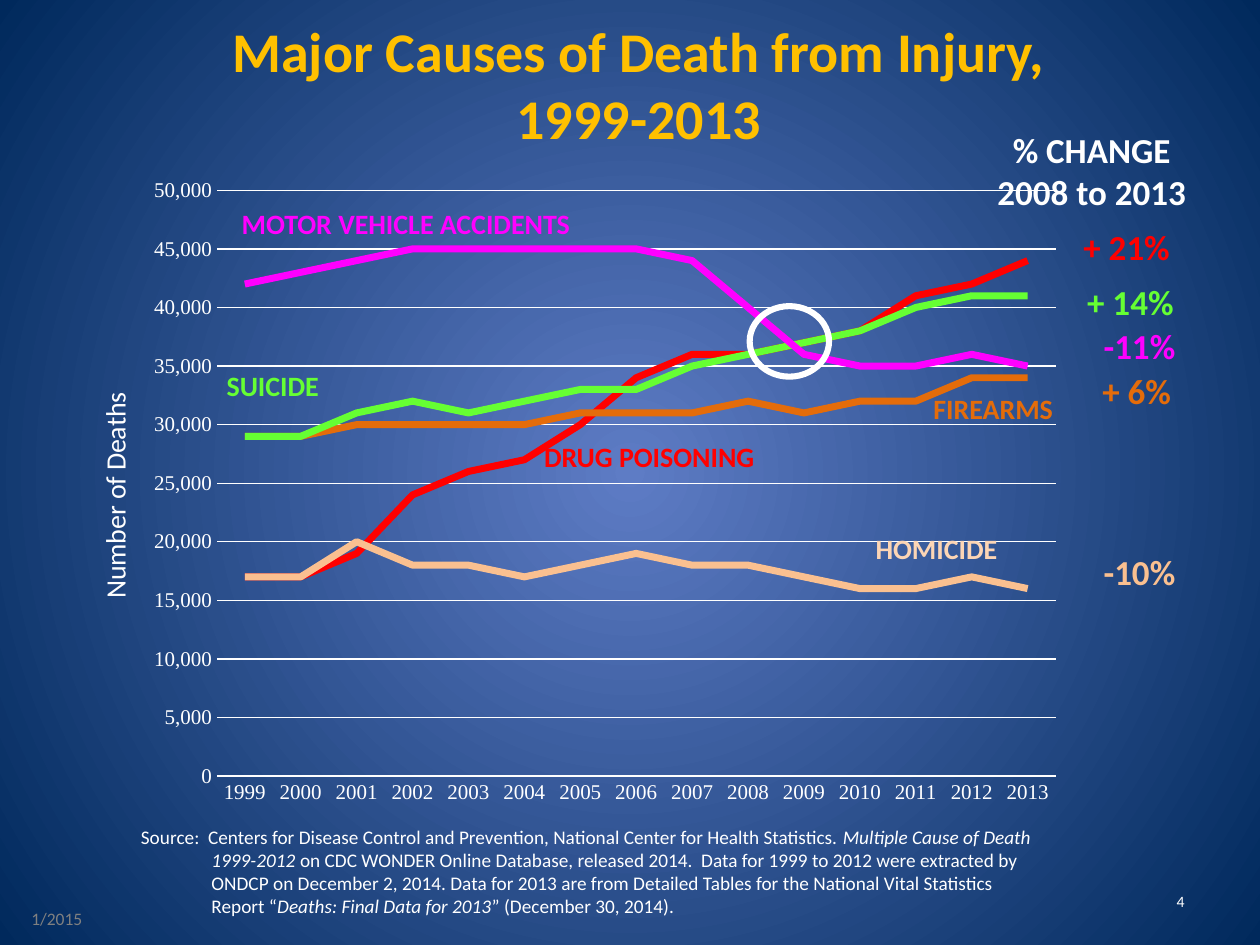
from dataclasses import dataclass

from lxml import etree
from pptx import Presentation
from pptx import util as u
from pptx.chart.data import CategoryChartData
from pptx.dml.color import RGBColor
from pptx.enum import chart as charts, shapes, text
from pptx.oxml import parse_xml
from pptx.oxml.ns import nsdecls, qn


@dataclass(frozen=True)
class Theme:
    font: str = "Calibri"
    axis_font: str = "Times New Roman"
    center: str = "5E7CC5"
    edge: str = "00295C"
    white: str = "FFFFFF"
    gold: str = "FFC000"
    gray: str = "808080"
    red: str = "FF0000"
    orange: str = "E46C0A"
    green: str = "66FF33"
    peach: str = "FAC090"
    light_peach: str = "FCD5B5"
    magenta: str = "FF00FF"
    title: int = 32
    change: int = 20
    label: int = 16
    axis: int = 12
    source: int = 11
    date: int = 10
    number: int = 9


class SlideBuilder:
    def __init__(self, slide, theme):
        self.slide = slide
        self.theme = theme

    def style(self, font, size, color, name=None, bold=False, italic=False):
        font.name = name or self.theme.font
        font.size = u.Pt(size)
        font.bold = bold
        font.italic = italic
        font.color.rgb = RGBColor.from_string(color)

    def background(self):
        fill = self.slide.background.fill
        fill.gradient()
        for stop, color in zip(fill.gradient_stops, (self.theme.center, self.theme.edge)):
            stop.color.rgb = RGBColor.from_string(color)
        # A circular gradient that starts in the middle of the slide
        linear = next(self.slide.element.iter(qn("a:lin")))
        circle = parse_xml(
            f'<a:path {nsdecls("a")} path="circle">'
            '<a:fillToRect l="50000" t="50000" r="50000" b="50000"/></a:path>')
        linear.getparent().replace(linear, circle)

    def text(self, box, paragraphs, size, color, bold=False, wrap=True, hanging=0,
             align=text.PP_ALIGN.LEFT, anchor=text.MSO_ANCHOR.TOP):
        """Each paragraph is a list of runs; every second run is italic."""
        shape = self.slide.shapes.add_textbox(*map(u.Inches, box))
        frame = shape.text_frame
        frame.word_wrap = wrap
        frame.vertical_anchor = anchor
        for index, runs in enumerate(paragraphs):
            paragraph = frame.add_paragraph() if index else frame.paragraphs[0]
            paragraph.alignment = align
            if hanging:
                properties = paragraph._p.get_or_add_pPr()
                properties.set("marL", str(u.Inches(hanging)))
                properties.set("indent", str(-u.Inches(hanging)))
            for position, wording in enumerate(runs):
                run = paragraph.add_run()
                run.text = wording
                self.style(run.font, size, color, bold=bold, italic=position % 2 == 1)

    def label(self, left, top, width, height, wording, size, color):
        self.text((left, top, width, height), [[wording]], size, color, bold=True, wrap=False)

    def ring(self, box, color, width):
        shape = self.slide.shapes.add_shape(shapes.MSO_SHAPE.OVAL, *map(u.Inches, box))
        shape.shadow.inherit = False
        shape.fill.background()
        shape.line.color.rgb = RGBColor.from_string(color)
        shape.line.width = u.Pt(width)

    def place(self, element, target=None, **fractions):
        """Give a chart part a fixed place, in fractions of the chart."""
        for old in element.findall(qn("c:layout")):
            element.remove(old)
        layout = parse_xml(f'<c:layout {nsdecls("c")}><c:manualLayout/></c:layout>')
        values = {"layoutTarget": target} if target else {}
        values.update(xMode="edge", yMode="edge", **fractions)
        for name, value in values.items():
            etree.SubElement(layout[0], qn(f"c:{name}")).set("val", str(value))
        text_part = element.find(qn("c:tx"))
        element.insert(0 if text_part is None else 1, layout)

    def line_chart(self, box, categories, series, axis_title):
        theme = self.theme
        white = RGBColor.from_string(theme.white)
        data = CategoryChartData(number_format="#,##0")
        data.categories = categories
        for index, (color, thousands) in enumerate(series, 1):
            data.add_series(f"Series {index}", [value * 1000 for value in thousands])
        chart = self.slide.shapes.add_chart(
            charts.XL_CHART_TYPE.LINE, *map(u.Inches, box), data).chart
        chart.has_legend = False
        chart.has_title = False
        self.style(chart.font, 10, theme.white, theme.axis_font)
        chart.plots[0].vary_by_categories = False
        for line, (color, thousands) in zip(chart.plots[0].series, series):
            line.smooth = False
            line.marker.style = charts.XL_MARKER_STYLE.NONE
            line.format.line.color.rgb = RGBColor.from_string(color)
            line.format.line.width = u.Pt(4)

        # Axes and gridlines
        years, deaths = chart.category_axis, chart.value_axis
        for axis in (years, deaths):
            axis.major_tick_mark = axis.minor_tick_mark = charts.XL_TICK_MARK.NONE
            self.style(axis.tick_labels.font, theme.axis, theme.white, theme.axis_font)
        deaths.minimum_scale, deaths.maximum_scale, deaths.major_unit = 0, 50000, 5000
        deaths.tick_labels.number_format = "#,##0"
        deaths.tick_labels.number_format_is_linked = False
        deaths.has_major_gridlines = True
        deaths.format.line.fill.background()
        for part in (years, deaths.major_gridlines):
            part.format.line.color.rgb = white
            part.format.line.width = u.Pt(0.75)
        title_frame = deaths.axis_title.text_frame
        title_frame.text = axis_title
        self.style(title_frame.paragraphs[0].runs[0].font, theme.label, theme.white)
        title_frame._txBody.bodyPr.set("rot", "-5400000")
        title_frame._txBody.bodyPr.set("vert", "horz")

        self.place(deaths.axis_title._element, x=0.03, y=0.34)
        plot_area = next(chart.element.iter(qn("c:plotArea")))
        self.place(plot_area, "inner", x=0.154, y=0.037, w=0.826, h=0.901)


def main():
    theme = Theme()
    presentation = Presentation()
    presentation.slide_width, presentation.slide_height = u.Inches(10), u.Inches(7.5)
    slide = presentation.slides.add_slide(presentation.slide_layouts[6])
    builder = SlideBuilder(slide, theme)
    builder.background()

    # Deaths by cause, in thousands
    series = [
        (theme.red, [17, 17, 19, 24, 26, 27, 30, 34, 36, 36, 37, 38, 41, 42, 44]),
        (theme.orange, [29, 29, 30, 30, 30, 30, 31, 31, 31, 32, 31, 32, 32, 34, 34]),
        (theme.green, [29, 29, 31, 32, 31, 32, 33, 33, 35, 36, 37, 38, 40, 41, 41]),
        (theme.peach, [17, 17, 20, 18, 18, 17, 18, 19, 18, 18, 17, 16, 16, 17, 16]),
        (theme.magenta, [42, 43, 44, 45, 45, 45, 45, 45, 44, 40, 36, 35, 35, 36, 35]),
    ]
    years = [str(year) for year in range(1999, 2014)]
    builder.line_chart((0.48, 1.32, 8.06, 5.16), years, series, "Number of Deaths")

    # Title, source and date
    center = text.PP_ALIGN.CENTER
    builder.text((1.32, 0.08, 7.5, 1.18), [["Major Causes of Death from Injury, 1999-2013"]],
                 theme.title, theme.gold, bold=True, align=center)
    source = [
        "Source:  Centers for Disease Control and Prevention, National Center for Health Statistics. ",
        "Multiple Cause of Death 1999-2012",
        " on CDC WONDER Online Database, released 2014.  Data for 1999 to 2012 were extracted by "
        "ONDCP on December 2, 2014. Data for 2013 are from Detailed Tables for the National Vital "
        "Statistics Report “",
        "Deaths: Final Data for 2013",
        "” (December 30, 2014).",
    ]
    builder.text((1.02, 6.5, 7.33, 0.84), [source], theme.source, theme.white, hanging=0.56)
    builder.text((0.15, 7.16, 0.68, 0.27), [["1/2015"]], theme.date, theme.gray, hanging=0.63)

    # Percent change column
    builder.text((7.5, 0.97, 2.33, 0.77), [["% CHANGE"], ["2008 to 2013"]],
                 theme.change, theme.white, bold=True, align=center)
    for left, top, width, wording, color in [
        (8.5, 1.74, 0.89, "+ 21%", theme.red),
        (8.66, 4.32, 0.78, "-10%", theme.peach),
        (8.53, 2.18, 0.89, "+ 14%", theme.green),
        (8.66, 2.53, 0.78, "-11%", theme.magenta),
        (8.65, 2.88, 0.75, "+ 6%", theme.orange),
    ]:
        builder.label(left, top, width, 0.44, wording, theme.change, color)

    # Names of the lines
    for left, top, width, wording, color in [
        (6.85, 4.17, 1.18, "HOMICIDE", theme.light_peach),
        (7.31, 3.06, 1.16, "FIREARMS", theme.orange),
        (4.22, 3.44, 1.9, "DRUG POISONING", theme.red),
        (1.7, 2.88, 0.95, "SUICIDE", theme.green),
        (1.82, 1.59, 2.84, "MOTOR VEHICLE ACCIDENTS", theme.magenta),
    ]:
        builder.label(left, top, width, 0.37, wording, theme.label, color)

    # Slide number and the ring around the crossing
    builder.text((7.17, 6.95, 2.33, 0.4), [["4"]], theme.number, theme.white,
                 align=text.PP_ALIGN.RIGHT, anchor=text.MSO_ANCHOR.MIDDLE)
    builder.ring((5.95, 2.43, 0.63, 0.56), theme.white, 3.5)

    presentation.save("out.pptx")


if __name__ == "__main__":
    main()
